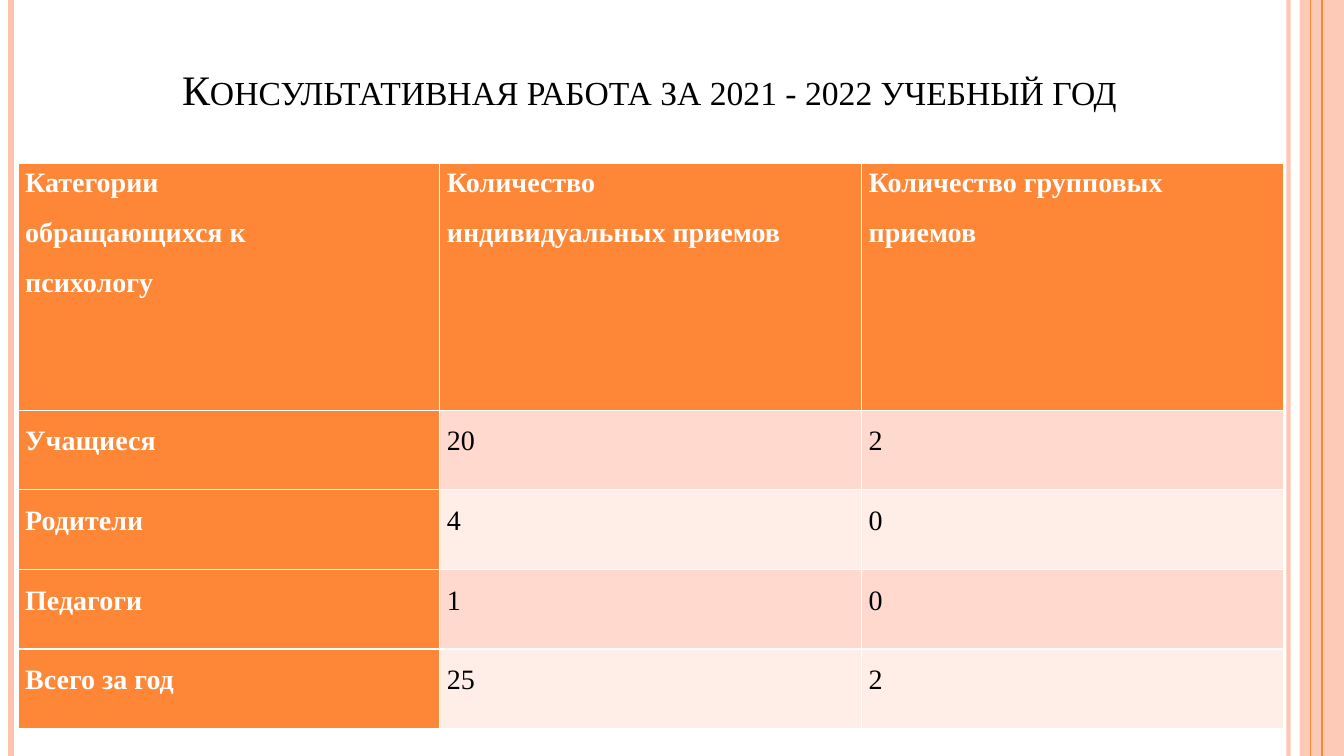
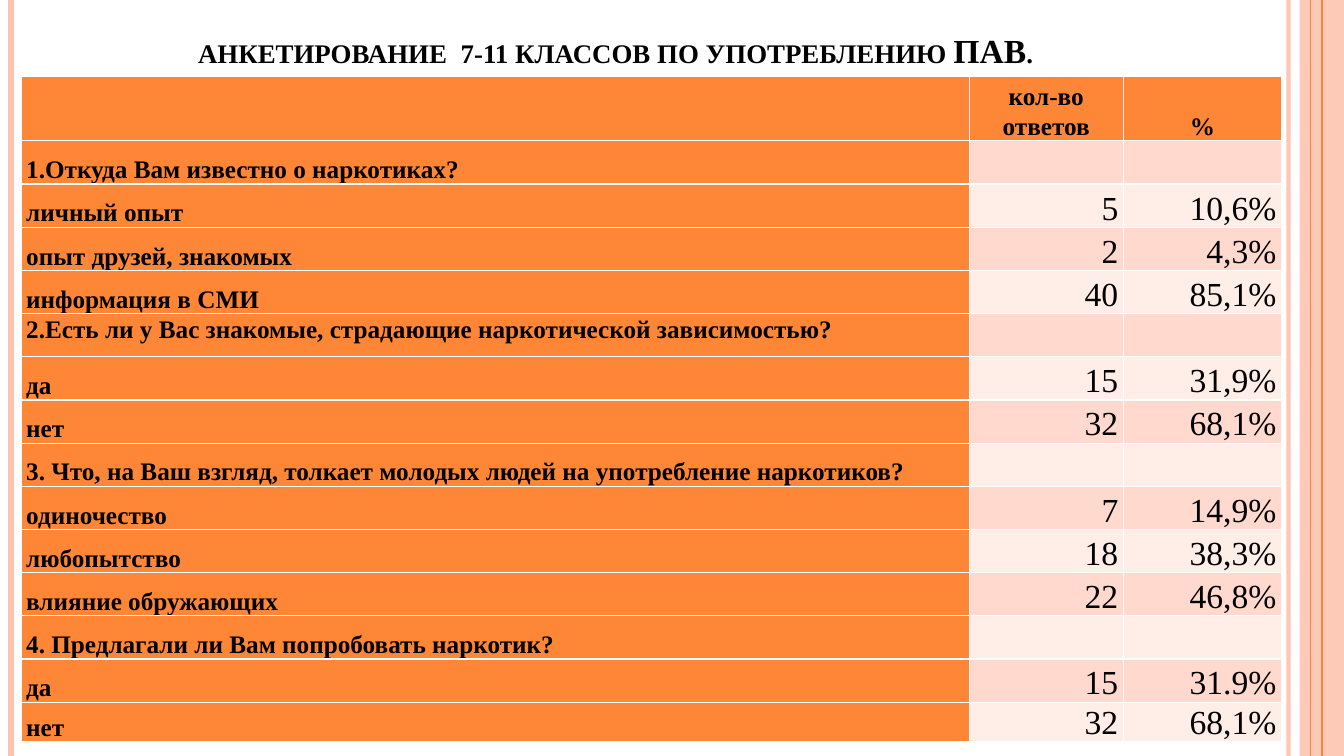
from collections import namedtuple

from lxml.etree import SubElement
from pptx import Presentation
from pptx.dml.color import RGBColor
from pptx.enum.shapes import MSO_CONNECTOR, MSO_SHAPE
from pptx.enum.text import MSO_ANCHOR, PP_ALIGN
from pptx.oxml.ns import qn
from pptx.util import Inches, Pt

Box = namedtuple("Box", "left top width height")

PAGE = Box(0, 0, 13.33, 7.5)
FONT = "Times New Roman"
ORANGE, PEACH, BLACK, WHITE = "FE8637", "FEC3AE", "000000", "FFFFFF"
BANDS = ("FFD9CE", "FFEDE8")
TITLE_ONLY = 5

# distance from the left edge, colour, width in points, opacity in percent
FRAME_LINES = (
    (12.78, PEACH, 3, 93),
    (0.11, PEACH, 4.5, 100),
    (13.11, ORANGE, 1.5, 100),
    (13, ORANGE, 0.75, 100),
)
FRAME_BAND = Box(12.89, 0, 0.44, 7.5)
BAND_OPACITY = 87

CONSULTATIONS = (
    ("Категории\nобращающихся к\nпсихологу",
     "Количество\nиндивидуальных приемов",
     "Количество групповых\nприемов"),
    ("Учащиеся", "20", "2"),
    ("Родители", "4", "0"),
    ("Педагоги", "1", "0"),
    ("Всего за год", "25", "2"),
)

SURVEY = (
    ("", "кол-во ответов", "%"),
    ("1.Откуда Вам известно о наркотиках?", "", ""),
    ("личный опыт", "5", "10,6%"),
    ("опыт друзей, знакомых", "2", "4,3%"),
    ("информация в СМИ", "40", "85,1%"),
    ("2.Есть ли у Вас знакомые, страдающие наркотической зависимостью?", "", ""),
    ("да", "15", "31,9%"),
    ("нет", "32", "68,1%"),
    ("3. Что, на Ваш взгляд, толкает молодых людей на употребление наркотиков?", "", ""),
    ("одиночество", "7", "14,9%"),
    ("любопытство", "18", "38,3%"),
    ("влияние обружающих", "22", "46,8%"),
    ("4. Предлагали ли Вам попробовать наркотик?", "", ""),
    ("да", "15", "31.9%"),
    ("нет", "32", "68,1%"),
)


def rgb(colour):
    return RGBColor.from_string(colour)


def apply(target, formats):
    for name, value in formats.items():
        setattr(target, name, value)


def inches(box):
    return [Inches(length) for length in box]


def paint(fill, colour):
    fill.solid()
    fill.fore_color.rgb = rgb(colour)


def set_opacity(shape, percent):
    if percent < 100:
        for colour in shape._element.spPr.iter(qn("a:srgbClr")):
            SubElement(colour, qn("a:alpha"), val=str(percent * 1000))


def format_text(paragraph, size, colour, bold, **formats):
    apply(paragraph, formats)
    apply(paragraph.font, {"name": FONT, "size": Pt(size), "bold": bold})
    paragraph.font.color.rgb = rgb(colour)


def add_frame(slide, box):
    """Draw the vertical rules and the right band down the given box."""
    band = slide.shapes.add_shape(MSO_SHAPE.RECTANGLE, *inches(FRAME_BAND))
    band.shadow.inherit = False
    paint(band.fill, PEACH)
    band.line.fill.background()
    set_opacity(band, BAND_OPACITY)
    for offset, colour, width, opacity in FRAME_LINES:
        x = Inches(box.left + offset)
        line = slide.shapes.add_connector(
            MSO_CONNECTOR.STRAIGHT, x, Inches(box.top), x, Inches(box.top + box.height))
        line.line.width = Pt(width)
        line.line.color.rgb = rgb(colour)
        set_opacity(line, opacity)
        SubElement(line._element.spPr, qn("a:effectLst"))


def place_title(slide, box, text, size, bold):
    """Fill the title placeholder with centred small capitals."""
    title = slide.shapes.title
    apply(title, dict(zip(box._fields, inches(box))))
    apply(title.text_frame, {"text": text, "word_wrap": True,
                             "vertical_anchor": MSO_ANCHOR.BOTTOM})
    paragraph = title.text_frame.paragraphs[0]
    format_text(paragraph, size, BLACK, bold, alignment=PP_ALIGN.CENTER)
    for run in paragraph.runs:
        run.font._element.set("cap", "small")


def fill_cell(cell, text, margin, anchor, colour, formats):
    apply(cell, {"margin_left": Inches(margin), "margin_right": Inches(margin),
                 "margin_top": 0, "margin_bottom": 0,
                 "vertical_anchor": anchor, "text": text})
    paint(cell.fill, colour)
    for paragraph in cell.text_frame.paragraphs:
        format_text(paragraph, **formats)


def add_grid(slide, box, rows, column_shares, row_shares, margin, style):
    """Add a table; style gives the anchor and text formats of a cell."""
    shape = slide.shapes.add_table(len(rows), len(column_shares), *inches(box))
    table = shape.table
    table.first_col = True
    for column, share in zip(table.columns, column_shares):
        column.width = Inches(box.width * share / sum(column_shares))
    for row, share in zip(table.rows, row_shares):
        row.height = Inches(box.height * share / sum(row_shares))
    for r, texts in enumerate(rows):
        for c, text in enumerate(texts):
            colour = BANDS[(r - 1) % 2] if r and c else ORANGE
            anchor, formats = style(r, c)
            fill_cell(table.cell(r, c), text, margin, anchor, colour, formats)


def consultation_style(row, column):
    body = bool(row and column)
    return MSO_ANCHOR.TOP, {
        "size": 20,
        "colour": BLACK if body else WHITE,
        "bold": not body,
        "alignment": PP_ALIGN.JUSTIFY if row else PP_ALIGN.LEFT,
        "line_spacing": 1.5 if row else 1.15,
        "space_after": Pt(10),
    }


def survey_style(row, column):
    body = bool(row and column)
    header_alignment = PP_ALIGN.LEFT if column == 0 else PP_ALIGN.CENTER
    anchor = MSO_ANCHOR.BOTTOM
    if column == 0 and SURVEY[row][0].startswith("2."):
        anchor = MSO_ANCHOR.TOP
    return anchor, {
        "size": 24 if body and SURVEY[row][column] else 18,
        "colour": BLACK,
        "bold": not body,
        "alignment": PP_ALIGN.RIGHT if body else header_alignment,
        "line_spacing": 1.07,
    }


def add_slide(presentation, title, grid):
    slide = presentation.slides.add_slide(presentation.slide_layouts[TITLE_ONLY])
    add_frame(slide, PAGE)
    place_title(slide, **title)
    add_grid(slide, **grid)


def main():
    presentation = Presentation()
    apply(presentation, {"slide_width": Inches(PAGE.width),
                         "slide_height": Inches(PAGE.height)})
    add_slide(
        presentation,
        {"box": Box(0.44, 0.14, 12, 1.04), "size": 30, "bold": False,
         "text": "Консультативная работа за 2021 - 2022 учебный год"},
        {"box": Box(0.18, 1.62, 12.55, 5.61), "rows": CONSULTATIONS,
         "column_shares": (1, 1, 1), "row_shares": (2.45,) + (0.79,) * 4,
         "margin": 0.07, "style": consultation_style})
    add_slide(
        presentation,
        {"box": Box(0.66, 0.19, 10.89, 0.56), "size": 24, "bold": True,
         "text": "анкетирование  7-11 классов по употреблению ПАВ."},
        {"box": Box(0.21, 0.76, 12.5, 6.6), "rows": SURVEY,
         "column_shares": (9.41, 1.53, 1.57),
         "row_shares": (0.64,) + (0.43,) * 13 + (0.39,),
         "margin": 0.05, "style": survey_style})
    presentation.save("out.pptx")


if __name__ == "__main__":
    main()
